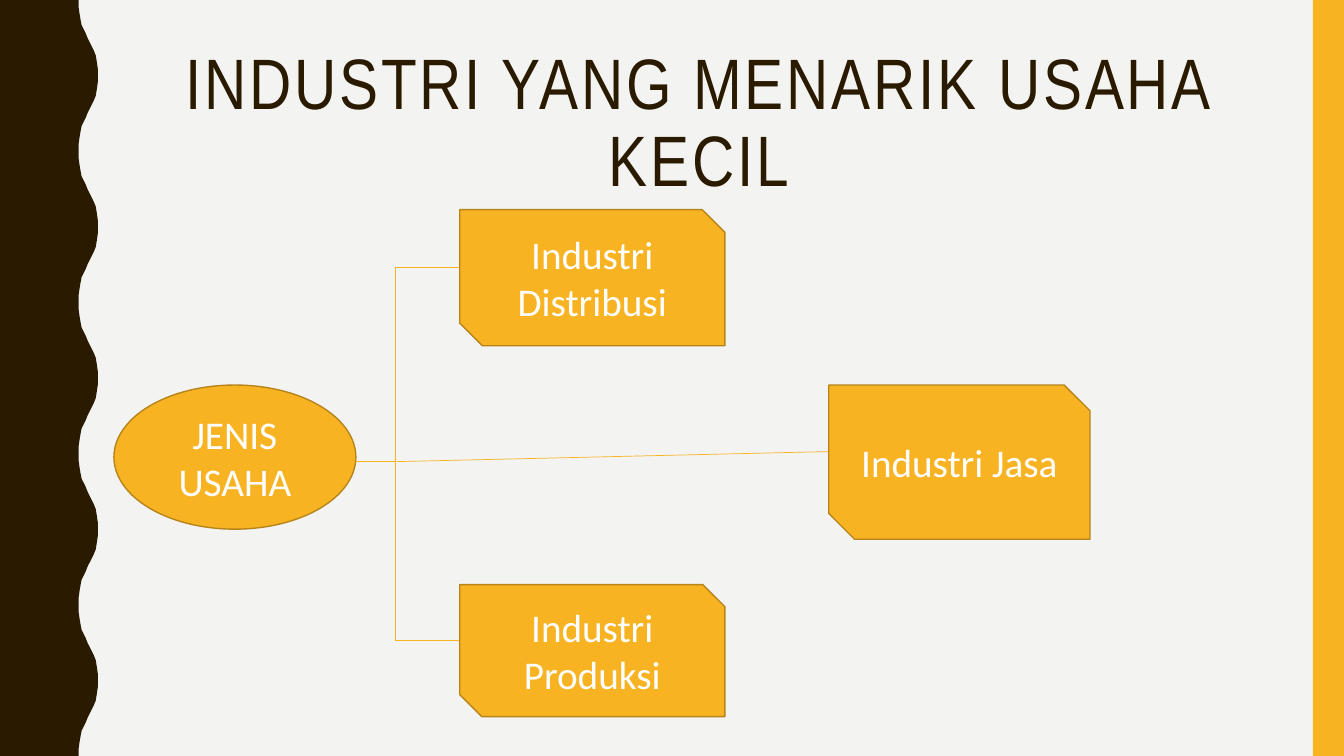
from lxml import etree
from pptx import Presentation
from pptx.dml.color import RGBColor
from pptx.enum import shapes, text
from pptx.oxml import ns
from pptx.util import Inches, Pt

BROWN = RGBColor(0x2A, 0x1A, 0x00)
GOLD = RGBColor(0xF8, 0xB3, 0x23)
DARK_GOLD = RGBColor(0xB7, 0x84, 0x1A)
PALE = RGBColor(0xF3, 0xF3, 0xF2)
WHITE = RGBColor(0xFF, 0xFF, 0xFF)

WIDTH, HEIGHT = 13.33, 7.5
TITLE = "INDUSTRI YANG MENARIK USAHA KECIL"
TITLE_AREA = (1.37, 0.42, 11.13, 1.63)
TITLE_FONT = {"name": "Arial Narrow", "size": Pt(51)}
NODE_FONT = {"name": "Calibri", "size": Pt(28)}

SNIPPED = shapes.MSO_SHAPE.SNIP_2_DIAG_RECTANGLE
NODES = [
    ("Industri Distribusi", SNIPPED, (4.56, 2.08, 2.63, 1.35)),
    ("Industri Jasa", SNIPPED, (8.22, 3.82, 2.59, 1.53)),
    ("Industri Produksi", SNIPPED, (4.56, 5.8, 2.63, 1.31)),
    ("JENIS USAHA", shapes.MSO_SHAPE.OVAL, (1.13, 3.82, 2.4, 1.43)),
]

TRUNK, BRANCH_END = 3.92, 4.56
TOP, MIDDLE, BOTTOM = 2.65, 4.58, 6.35
LINES = [
    (TRUNK, MIDDLE, 3.14, MIDDLE),
    (TRUNK, TOP, TRUNK, BOTTOM),
    (TRUNK, TOP, BRANCH_END, TOP),
    (TRUNK, MIDDLE, 8.22, 4.48),
    (TRUNK, BOTTOM, BRANCH_END, BOTTOM),
]

# Edge of the left band from a trough to the next crest, as (x, y)
HALF_WAVE = [
    (0.78, 0), (0.78, 0.07), (0.79, 0.14), (0.8, 0.2), (0.81, 0.25),
    (0.83, 0.29), (0.85, 0.33), (0.87, 0.38), (0.89, 0.42), (0.91, 0.46),
    (0.93, 0.5), (0.95, 0.55), (0.96, 0.61), (0.97, 0.68), (0.97, 0.75),
]
PERIOD = 1.5


def paint(shape, fill, outline=None):
    shape.shadow.inherit = False
    shape.fill.solid()
    shape.fill.fore_color.rgb = fill
    if outline is None:
        shape.line.fill.background()
    else:
        shape.line.color.rgb = outline
        shape.line.width = Pt(1)


def write(shape, words, font, color):
    """Put one centred paragraph in the shape and return its run."""
    frame = shape.text_frame
    frame.word_wrap = True
    frame.vertical_anchor = text.MSO_ANCHOR.MIDDLE
    para = frame.paragraphs[0]
    para.alignment = text.PP_ALIGN.CENTER
    span = para.add_run()
    span.text = words
    for name, value in font.items():
        setattr(span.font, name, value)
    span.font.color.rgb = color
    return span


def add_wavy_band(page):
    wave = HALF_WAVE + [(x, PERIOD - y) for x, y in HALF_WAVE[-2::-1]]
    edge = [(x, y + i * PERIOD) for i in range(round(HEIGHT / PERIOD)) for x, y in wave]
    outline = page.shapes.build_freeform(0, 0)
    outline.add_line_segments(
        [(Inches(x), Inches(y)) for x, y in edge + [(0, HEIGHT)]], close=True)
    paint(outline.convert_to_shape(), BROWN)


def add_line(page, ends):
    line = page.shapes.add_connector(
        shapes.MSO_CONNECTOR.STRAIGHT, *map(Inches, ends))
    line.line.color.rgb = GOLD
    line.line.width = Pt(0.5)
    etree.SubElement(line._element.spPr, ns.qn("a:effectLst"))


def main():
    deck = Presentation()
    deck.slide_width, deck.slide_height = Inches(WIDTH), Inches(HEIGHT)
    page = deck.slides.add_slide(deck.slide_layouts[6])
    page.background.fill.solid()
    page.background.fill.fore_color.rgb = PALE

    add_wavy_band(page)
    stripe = page.shapes.add_shape(
        shapes.MSO_SHAPE.RECTANGLE, *map(Inches, (13.02, 0, 0.31, HEIGHT)))
    paint(stripe, GOLD)

    title = page.shapes.add_textbox(*map(Inches, TITLE_AREA))
    span = write(title, TITLE, TITLE_FONT, BROWN)
    span.font._element.set("spc", "200")
    title.text_frame.paragraphs[0].line_spacing = 0.9

    for ends in LINES:
        add_line(page, ends)
    for words, kind, area in NODES:
        node = page.shapes.add_shape(kind, *map(Inches, area))
        paint(node, GOLD, DARK_GOLD)
        write(node, words, NODE_FONT, WHITE)

    deck.save("out.pptx")


if __name__ == "__main__":
    main()
